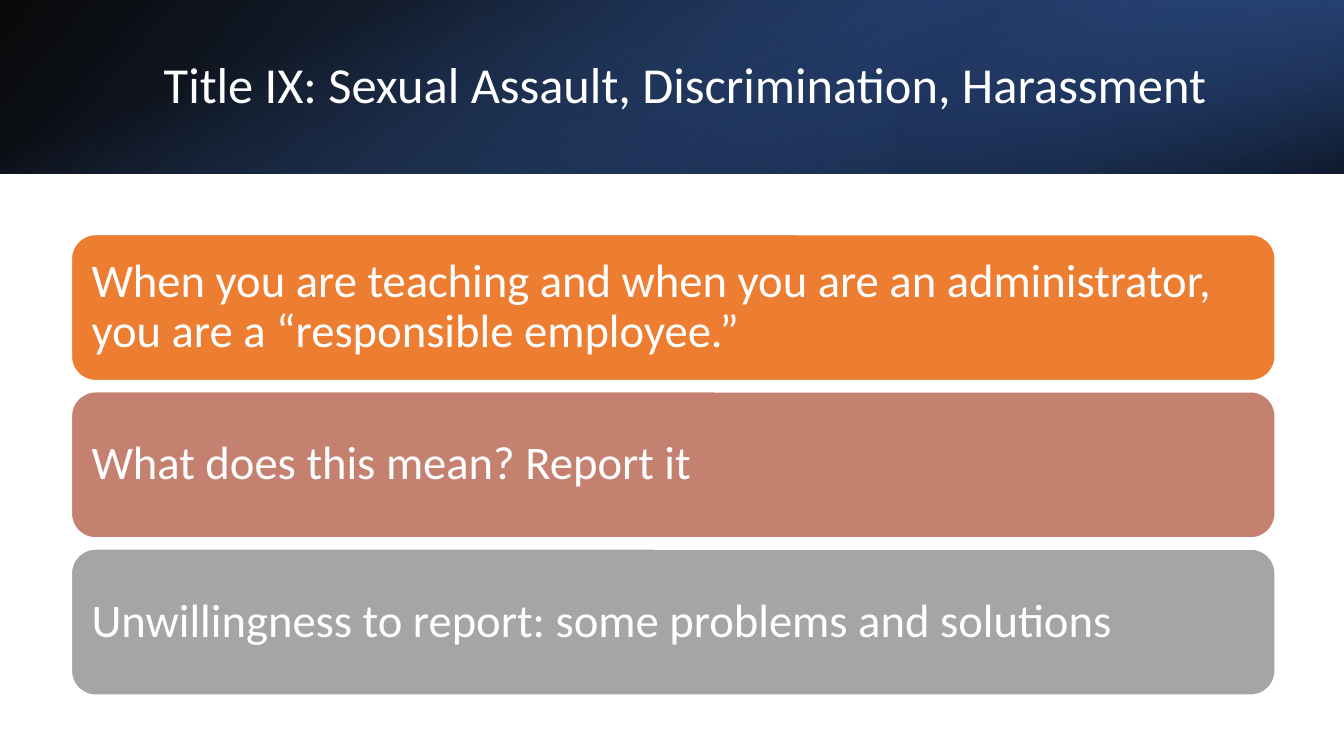
from dataclasses import dataclass

from lxml.etree import SubElement
from pptx import Presentation
from pptx.dml.color import RGBColor as RGB
from pptx.enum.shapes import MSO_SHAPE as Preset
from pptx.enum.text import MSO_ANCHOR as Anchor, PP_ALIGN as Align
from pptx.oxml.ns import qn
from pptx.shapes.autoshape import Shape
from pptx.slide import Slide
from pptx.util import Inches, Pt

WIDTH = 10
HEIGHT = WIDTH * 9 / 16
BANNER_HEIGHT = 0.23 * HEIGHT


@dataclass(frozen=True)
class Theme:
    font: str = "Calibri"
    title_size: int = 27
    card_size: int = 25
    line_spacing: float = 0.9
    white: str = "FFFFFF"
    black: str = "000000"
    orange: str = "ED7D31"
    rose: str = "C48170"
    gray: str = "A5A5A5"
    deep_blue: str = "2F5597"
    navy: str = "203864"
    blue: str = "4472C4"


@dataclass(frozen=True)
class Box:
    left: float
    top: float
    width: float
    height: float

    def lengths(self) -> list[Inches]:
        return [Inches(v) for v in (self.left, self.top, self.width, self.height)]


@dataclass(frozen=True)
class Stop:
    position: int
    color: str
    opacity: int


@dataclass(frozen=True)
class BannerLayer:
    box: Box
    stops: tuple[Stop, Stop]
    angle: int
    rotation: int = 0
    flipped: bool = False


@dataclass(frozen=True)
class Card:
    text: str
    color: str


THEME = Theme()

LAYERS = (
    BannerLayer(Box(0, 0, WIDTH, BANNER_HEIGHT),
                (Stop(0, THEME.black, 96), Stop(100, THEME.deep_blue, 100)),
                angle=140, flipped=True),
    BannerLayer(Box(WIDTH * 2 / 3, 0, WIDTH / 3, BANNER_HEIGHT),
                (Stop(19, THEME.navy, 68), Stop(100, THEME.blue, 79)),
                angle=320, rotation=180, flipped=True),
    # Upright strip turned a quarter so that it covers the banner
    BannerLayer(Box((WIDTH - BANNER_HEIGHT) / 2, (BANNER_HEIGHT - WIDTH) / 2,
                    BANNER_HEIGHT, WIDTH),
                (Stop(23, THEME.blue, 0), Stop(99, THEME.black, 74)),
                angle=340, rotation=90),
)

CARDS = (
    Card("When you are teaching and when you are an administrator, "
         "you are a “responsible employee.”", THEME.orange),
    Card("What does this mean? Report it", THEME.rose),
    Card("Unwillingness to report: some problems and solutions", THEME.gray),
)
FIRST_CARD = Box(0.53, 0.31 * HEIGHT, 8.96, 1.09)
CARD_GAP = 0.08


def fill_gradient(shape: Shape, layer: BannerLayer) -> None:
    """Linear gradient whose stops may be transparent."""
    shape.fill.gradient()
    gradient = shape._element.spPr.find(qn("a:gradFill"))
    for child in list(gradient):
        gradient.remove(child)
    gradient.set("rotWithShape", "1")
    stop_list = SubElement(gradient, qn("a:gsLst"))
    for stop in layer.stops:
        node = SubElement(stop_list, qn("a:gs"), pos=str(stop.position * 1000))
        color = SubElement(node, qn("a:srgbClr"), val=stop.color)
        SubElement(color, qn("a:alpha"), val=str(stop.opacity * 1000))
    SubElement(gradient, qn("a:lin"), ang=str(layer.angle * 60000), scaled="0")


def add_layer(slide: Slide, layer: BannerLayer) -> None:
    shape = slide.shapes.add_shape(Preset.RECTANGLE, *layer.box.lengths())
    shape.shadow.inherit = False
    shape.line.fill.background()
    shape.rotation = layer.rotation
    if layer.flipped:
        shape._element.spPr.find(qn("a:xfrm")).set("flipH", "1")
    fill_gradient(shape, layer)


def write_text(shape: Shape, text: str, size: int) -> None:
    frame = shape.text_frame
    frame.word_wrap = True
    frame.vertical_anchor = Anchor.MIDDLE
    paragraph = frame.paragraphs[0]
    paragraph.text = text
    paragraph.alignment = Align.LEFT
    paragraph.line_spacing = THEME.line_spacing
    paragraph.font.name = THEME.font
    paragraph.font.size = Pt(size)
    paragraph.font.color.rgb = RGB.from_string(THEME.white)


def add_card(slide: Slide, card: Card, row: int) -> None:
    top = FIRST_CARD.top + row * (FIRST_CARD.height + CARD_GAP)
    box = Box(FIRST_CARD.left, top, FIRST_CARD.width, FIRST_CARD.height)
    shape = slide.shapes.add_shape(Preset.ROUNDED_RECTANGLE, *box.lengths())
    shape.shadow.inherit = False
    shape.fill.solid()
    shape.fill.fore_color.rgb = RGB.from_string(card.color)
    shape.line.color.rgb = RGB.from_string(THEME.white)
    shape.line.width = Pt(1)
    write_text(shape, card.text, THEME.card_size)


def main() -> None:
    presentation = Presentation()
    presentation.slide_width = Inches(WIDTH)
    presentation.slide_height = Inches(HEIGHT)
    slide = presentation.slides.add_slide(presentation.slide_layouts[6])

    # Banner and title
    for layer in LAYERS:
        add_layer(slide, layer)
    title = slide.shapes.add_textbox(*Box(1.12, 0.29, 8.24, 0.72).lengths())
    write_text(title, "Title IX: Sexual Assault, Discrimination, Harassment",
               THEME.title_size)

    # Stacked cards
    for row, card in enumerate(CARDS):
        add_card(slide, card, row)

    presentation.save("out.pptx")


if __name__ == "__main__":
    main()
